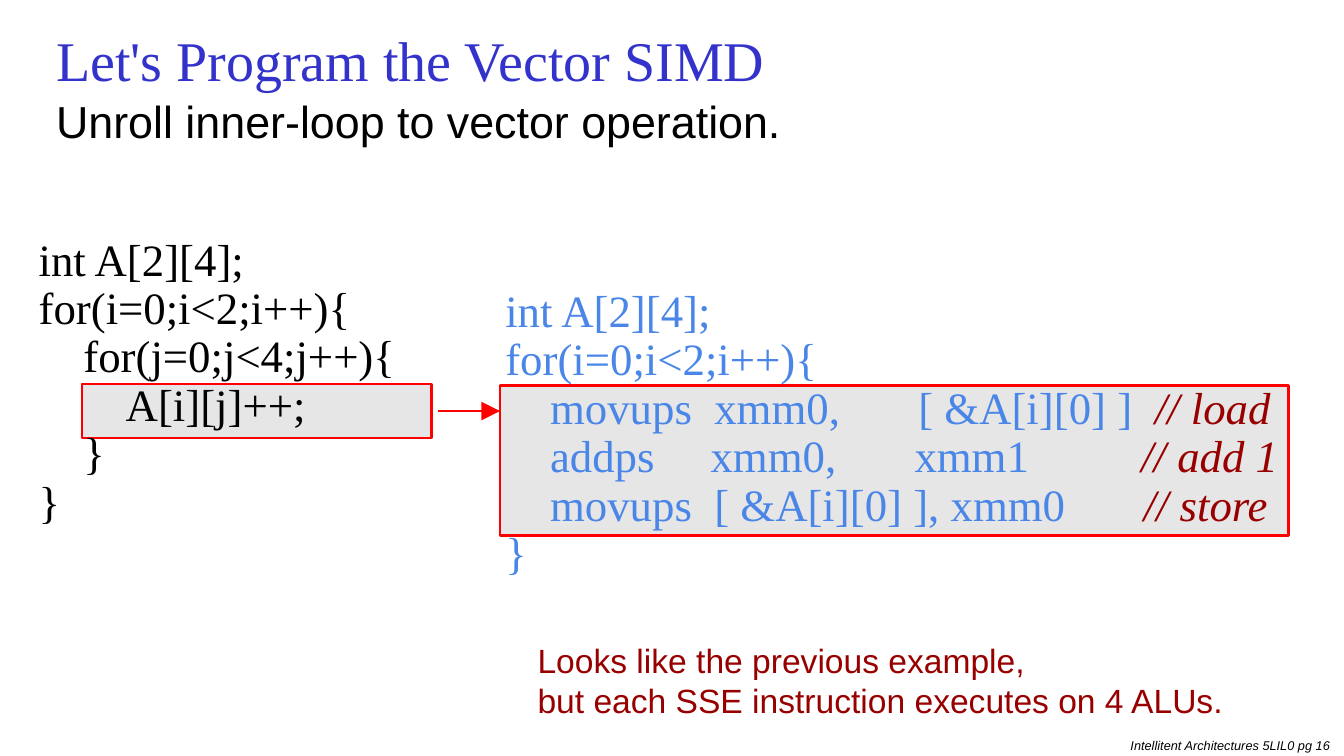
from lxml import etree
from pptx import Presentation
from pptx.dml.color import RGBColor
from pptx.enum.shapes import MSO_CONNECTOR, MSO_SHAPE
from pptx.enum.text import MSO_ANCHOR, MSO_AUTO_SIZE, PP_ALIGN
from pptx.oxml.ns import qn
from pptx.util import Cm, Pt

RECT, LINE = MSO_SHAPE.RECTANGLE, MSO_CONNECTOR.STRAIGHT
TOP, BOTTOM = MSO_ANCHOR.TOP, MSO_ANCHOR.BOTTOM
LEFT, RIGHT = PP_ALIGN.LEFT, PP_ALIGN.RIGHT
FIXED = MSO_AUTO_SIZE.NONE

# Content: a line is a list of (text, style name) runs
TITLE = [[("Let's Program the Vector SIMD", "title")]]
LEAD = [[("Unroll inner-loop to vector operation.", "lead")]]
LOOP = [[(line, "loop")] for line in (
    "int A[2][4];",
    "for(i=0;i<2;i++){",
    "    for(j=0;j<4;j++){",
    "        A[i][j]++;",
    "    }",
    "}",
)]
VECTOR = [
    [("int A[2][4];", "vector")],
    [("for(i=0;i<2;i++){", "vector")],
    [("    movups  xmm0,       [ &A[i][0] ]  ", "vector"), ("// load", "remark")],
    [("    addps     xmm0,       xmm1          ", "vector"), ("// add 1", "remark")],
    [("    movups  [ &A[i][0] ], xmm0       ", "vector"), ("// store", "remark")],
    [("}", "vector")],
]
NOTE = [
    [("Looks like the previous example,", "note")],
    [("but each SSE instruction executes on 4 ALUs.", "note")],
]
FOOTER = [[("Intellitent Architectures 5LIL0 pg 16", "footer")]]

# Format values
SERIF, SANS = "Times New Roman", "Arial"
STYLES = {
    "title": ({"name": SERIF, "size": Pt(30)}, "3333CC"),
    "lead": ({"name": SANS, "size": Pt(24)}, "000000"),
    "loop": ({"name": SERIF, "size": Pt(24)}, "000000"),
    "vector": ({"name": SERIF, "size": Pt(24)}, "4A86E8"),
    "remark": ({"name": SERIF, "size": Pt(24), "italic": True}, "980000"),
    "note": ({"name": SANS, "size": Pt(18)}, "980000"),
    "footer": ({"name": SANS, "size": Pt(6.8), "italic": True}, "000000"),
}
RED, GREY = "FF0000", "E6E6E6"
PAD = 0.25


def paint(target, code):
    """Set a solid colour on a fill, or on the colour of a font or line."""
    if hasattr(target, "solid"):
        target.solid()
        target.fore_color.rgb = RGBColor.from_string(code)
    else:
        target.color.rgb = RGBColor.from_string(code)


def place(shape, box):
    for side, size in zip(("left", "top", "width", "height"), box):
        setattr(shape, side, Cm(size))


def write(shape, lines, space=1.0, pad=PAD, anchor=TOP, align=LEFT):
    frame = shape.text_frame
    values = {"word_wrap": True, "auto_size": FIXED, "vertical_anchor": anchor}
    for side in ("left", "top", "right", "bottom"):
        values["margin_" + side] = Cm(pad)
    for key, value in values.items():
        setattr(frame, key, value)
    for i, line in enumerate(lines):
        para = frame.add_paragraph() if i else frame.paragraphs[0]
        props = para._p.get_or_add_pPr()
        props.set("marL", "0")
        props.set("indent", "0")
        etree.SubElement(props, qn("a:buNone"))
        for key, value in {"line_spacing": space, "space_before": Pt(0),
                           "space_after": Pt(0), "alignment": align}.items():
            setattr(para, key, value)
        for text, style in line:
            run = para.add_run()
            run.text = text
            font, code = STYLES[style]
            for key, value in font.items():
                setattr(run.font, key, value)
            paint(run.font, code)


def add_text(slide, box, lines, **form):
    write(slide.shapes.add_textbox(*map(Cm, box)), lines, **form)


def add_frame(slide, box):
    frame = slide.shapes.add_shape(RECT, *map(Cm, box))
    frame.shadow.inherit = False
    paint(frame.fill, GREY)
    paint(frame.line, RED)
    frame.line.width = Pt(1.5)
    # Frames lie behind the code in the placeholders
    tree = slide.shapes._spTree
    tree.remove(frame._element)
    tree.insert(2, frame._element)


def add_arrow(slide, x1, x2, y):
    arrow = slide.shapes.add_connector(LINE, Cm(x1), Cm(y), Cm(x2), Cm(y))
    paint(arrow.line, RED)
    arrow.line.width = Pt(1.5)
    etree.SubElement(arrow.line._get_or_add_ln(), qn("a:tailEnd"),
                     type="triangle", w="lg", len="lg")
    etree.SubElement(arrow._element.spPr, qn("a:effectLst"))


def main():
    deck = Presentation()
    deck.slide_width, deck.slide_height = Cm(25.4), Cm(14.29)
    slide = deck.slides.add_slide(deck.slide_layouts[3])
    title, loop, vector = slide.placeholders

    # Heading
    place(title, (0.81, 0.48, 23.75, 1.52))
    write(title, TITLE, space=0.8, anchor=BOTTOM)
    add_text(slide, (0.81, 1.52, 21.84, 1.02), LEAD)

    # Code before and after, with the matching parts framed
    place(loop, (0.48, 4.24, 7.39, 8.69))
    write(loop, LOOP, space=0.9)
    place(vector, (9.3, 5.21, 16.1, 8.48))
    write(vector, VECTOR, space=0.9)
    add_frame(slide, (1.55, 7.26, 6.6, 1.02))
    add_frame(slide, (9.45, 7.29, 14.91, 2.84))
    add_arrow(slide, 8.28, 9.45, 7.77)

    # Note and footer
    add_text(slide, (9.91, 11.84, 14.45, 1.98), NOTE)
    add_text(slide, (20.04, 13.82, 5.23, 0.47), FOOTER, pad=0.13, align=RIGHT)

    deck.save("out.pptx")


if __name__ == "__main__":
    main()
